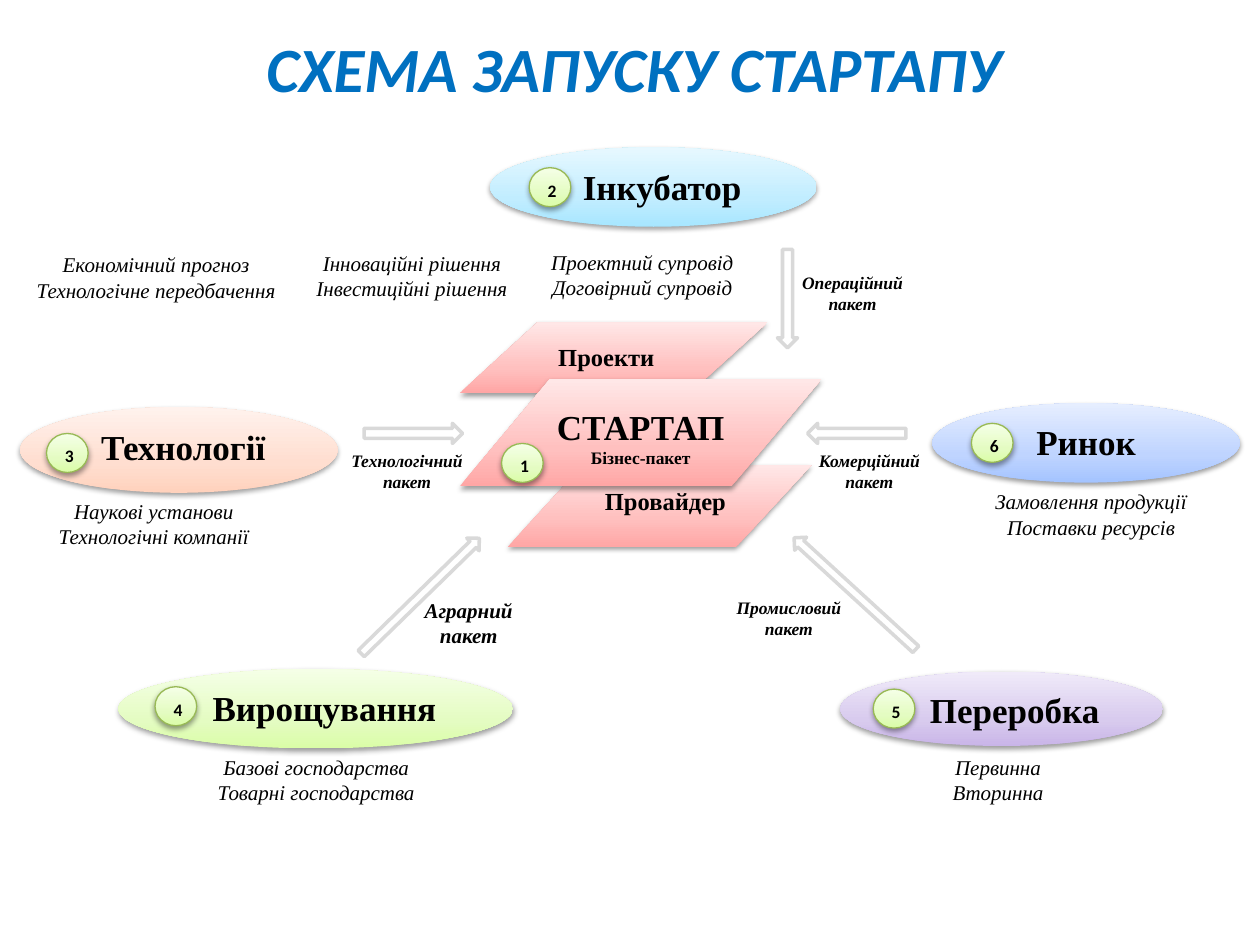
from copy import deepcopy

from pptx import Presentation
from pptx.dml.color import RGBColor
from pptx.enum import shapes, text
from pptx.oxml import parse_xml
from pptx.oxml.ns import nsdecls, qn
from pptx.util import Pt

COLORS = {"title": "0070C0", "text": "000000", "white": "FFFFFF",
          "arrow": "D9D9D9", "badge": "98B955"}
# Gradients run from the bottom up
GRADIENTS = {
    "red": ("FFA6A5", "FFC0BF", "FFE7E7"),
    "cyan": ("A7E6FF", "C1EDFF", "E7F8FF"),
    "blue": ("A4C4FF", "BFD4FF", "E6EEFF"),
    "orange": ("FFD2BD", "FFDED0", "FFF2ED"),
    "green": ("DAFDA7", "E4FCC2", "F5FFE7"),
    "violet": ("C9B5E8", "D8CBEE", "F0EAF9"),
}
STOPS = (0, 0.35, 1)
SERIF, SANS = "Times New Roman", "Calibri"
SHAPE, ALIGN = shapes.MSO_SHAPE, text.PP_ALIGN

TITLE = "СХЕМА ЗАПУСКУ СТАРТАПУ"
CAPTION_H = 33.8
# left, top, width, lines
NOTES = [
    (91.4, 427.7, 178.6, ["Базові господарства", "Товарні господарства"]),
    (172.1, 139.7, 126.7, ["Інноваційні рішення", "Інвестиційні рішення"]),
    (481, 427.7, 178.6, ["Первинна", "Вторинна"]),
    (554.4, 275.8, 138.2, ["Замовлення продукції", "Поставки ресурсів"]),
    (303.8, 139, 126.7, ["Проектний супровід", "Договірний супровід"]),
    (11.5, 140.4, 155.5, ["Економічний прогноз", "Технологічне передбачення"]),
    (16.6, 281.5, 175.7, ["Наукові установи", "Технологічні компанії"]),
]
# left, top, width, size, lines
PACKAGES = [
    (405.4, 337.7, 90.7, 10, ["Промисловий", "пакет"]),
    (452.9, 253.4, 87.8, 10, ["Комерційний пакет"]),
    (183.6, 253.4, 97.9, 10, ["Технологічний пакет"]),
    (445.7, 151.9, 82.8, 10, ["Операційний", "пакет"]),
    (215.3, 337.7, 105.1, 12, ["Аграрний", "пакет"]),
]
# box, gradient, left indent, name
STAGES = [
    ((280.1, 84.2, 186.5, 45.4), "cyan", 10, "Інкубатор"),
    ((532.8, 230.4, 175.7, 45.4), "blue", 0, "Ринок"),
    ((11.5, 232.6, 181.4, 49), "orange", 5, "Технології"),
    ((67.7, 382.3, 225.4, 45.4), "green", 10, "Вирощування"),
    ((480.2, 383.8, 184.3, 42.5), "violet", 15, "Переробка"),
]
# box, slant, alignment, left indent, (line, size) pairs
CORE = [
    ((290.2, 265.7, 173.5, 46.8), 0.92, ALIGN.LEFT, 16, [("Провайдер", 14)]),
    ((262.8, 184.3, 175.7, 40.3), 1.1, ALIGN.LEFT, 16, [("Проекти", 14)]),
    ((262.8, 216.7, 206.6, 61.2), 0.84, ALIGN.CENTER, 0,
     [("СТАРТАП", 20), ("Бізнес-пакет", 10)]),
]
BADGE_SIZE = (23.8, 22.3)
BADGES = [(286.6, 253.4), (302.4, 95.8), (26.6, 247.7),
          (88.6, 392.4), (499, 393.8), (555.1, 241.9)]
# left, top, width, height, rotation
ARROWS = [
    (421.9, 164.9, 56.2, 11.5, 90),
    (461.5, 241.9, 56.2, 11.5, 180),
    (208.1, 241.9, 56.2, 11.5, 0),
    (193, 335.5, 94.3, 10.1, 315.7),
    (441.4, 334.1, 94.3, 10.1, 222.5),
]


def rgb(name):
    return RGBColor.from_string(COLORS[name])


def add_shape(s, kind, box, line=None, width=0.75):
    sp = s.shapes.add_shape(kind, *map(Pt, box))
    sp.shadow.inherit = False
    sp.fill.solid()
    sp.fill.fore_color.rgb = rgb("white")
    if line:
        sp.line.color.rgb = rgb(line)
        sp.line.width = Pt(width)
    else:
        sp.line.fill.background()
    return sp


def add_glossy(s, kind, box, gradient, line=None):
    """Shape with a three-stop gradient and a soft shadow below."""
    sp = add_shape(s, kind, box, line)
    sp.fill.gradient()
    sp.fill.gradient_angle = 90
    stops = sp._element.spPr.find(".//" + qn("a:gsLst"))
    stops.append(deepcopy(stops[0]))
    for stop, position, color in zip(sp.fill.gradient_stops, STOPS, GRADIENTS[gradient]):
        stop.position = position
        stop.color.rgb = RGBColor.from_string(color)
    sp._element.spPr.find(qn("a:effectLst")).append(parse_xml(
        f'<a:outerShdw {nsdecls("a")} blurRad="{Pt(3.1)}" dist="{Pt(1.6)}" '
        'dir="5400000" rotWithShape="0"><a:srgbClr val="000000">'
        '<a:alpha val="38000"/></a:srgbClr></a:outerShdw>'))
    return sp


def write(sp, lines, align=ALIGN.CENTER, indent=0, font=SERIF, bold=True,
          italic=False, color="text", anchor=text.MSO_ANCHOR.TOP):
    tf = sp.text_frame
    tf.word_wrap = True
    tf.vertical_anchor = anchor
    for i, (line, size) in enumerate(lines):
        p = tf.add_paragraph() if i else tf.paragraphs[0]
        p.text = line
        p.alignment = align
        if indent:
            p._p.get_or_add_pPr().set("marL", str(Pt(indent)))
        f = p.font
        f.name, f.size, f.bold, f.italic = font, Pt(size), bold, italic
        f.color.rgb = rgb(color)
    return tf


def main():
    prs = Presentation()
    prs.slide_width, prs.slide_height = Pt(720), Pt(540)
    s = prs.slides.add_slide(prs.slide_layouts[5])
    s.background.fill.solid()
    s.background.fill.fore_color.rgb = rgb("white")

    # Title
    title = s.shapes.title
    title.left, title.top, title.width, title.height = map(Pt, (38.2, 10.1, 648, 56.9))
    write(title, [(TITLE, 36)], font=SANS, italic=True, color="title",
          anchor=text.MSO_ANCHOR.MIDDLE)

    # Notes and package labels
    captions = [(x, y, w, 12, lines, False) for x, y, w, lines in NOTES]
    captions += [(*package, True) for package in PACKAGES]
    for x, y, w, size, lines, bold in captions:
        sp = add_shape(s, SHAPE.RECTANGLE, (x, y, w, CAPTION_H), "white")
        tf = write(sp, [(line, size) for line in lines], bold=bold, italic=True)
        if lines[0] == "Наукові установи":  # first line sits left of centre
            tf.paragraphs[0]._p.get_or_add_pPr().set("marR", str(Pt(33)))

    # Stages around the startup
    for box, gradient, indent, name in STAGES:
        write(add_glossy(s, SHAPE.OVAL, box, gradient), [(name, 20)], indent=indent)

    # Startup core
    for box, slant, align, indent, lines in CORE:
        sp = add_glossy(s, SHAPE.PARALLELOGRAM, box, "red")
        sp.adjustments[0] = slant
        write(sp, lines, align, indent)

    # Numbered badges
    for number, corner in enumerate(BADGES, 1):
        sp = add_glossy(s, SHAPE.OVAL, corner + BADGE_SIZE, "green", "badge")
        write(sp, [(str(number), 10)], ALIGN.LEFT, font=SANS)

    # Arrows towards the core
    for *box, rotation in ARROWS:
        add_shape(s, SHAPE.RIGHT_ARROW, box, "arrow", 2).rotation = rotation

    prs.save("out.pptx")


if __name__ == "__main__":
    main()
